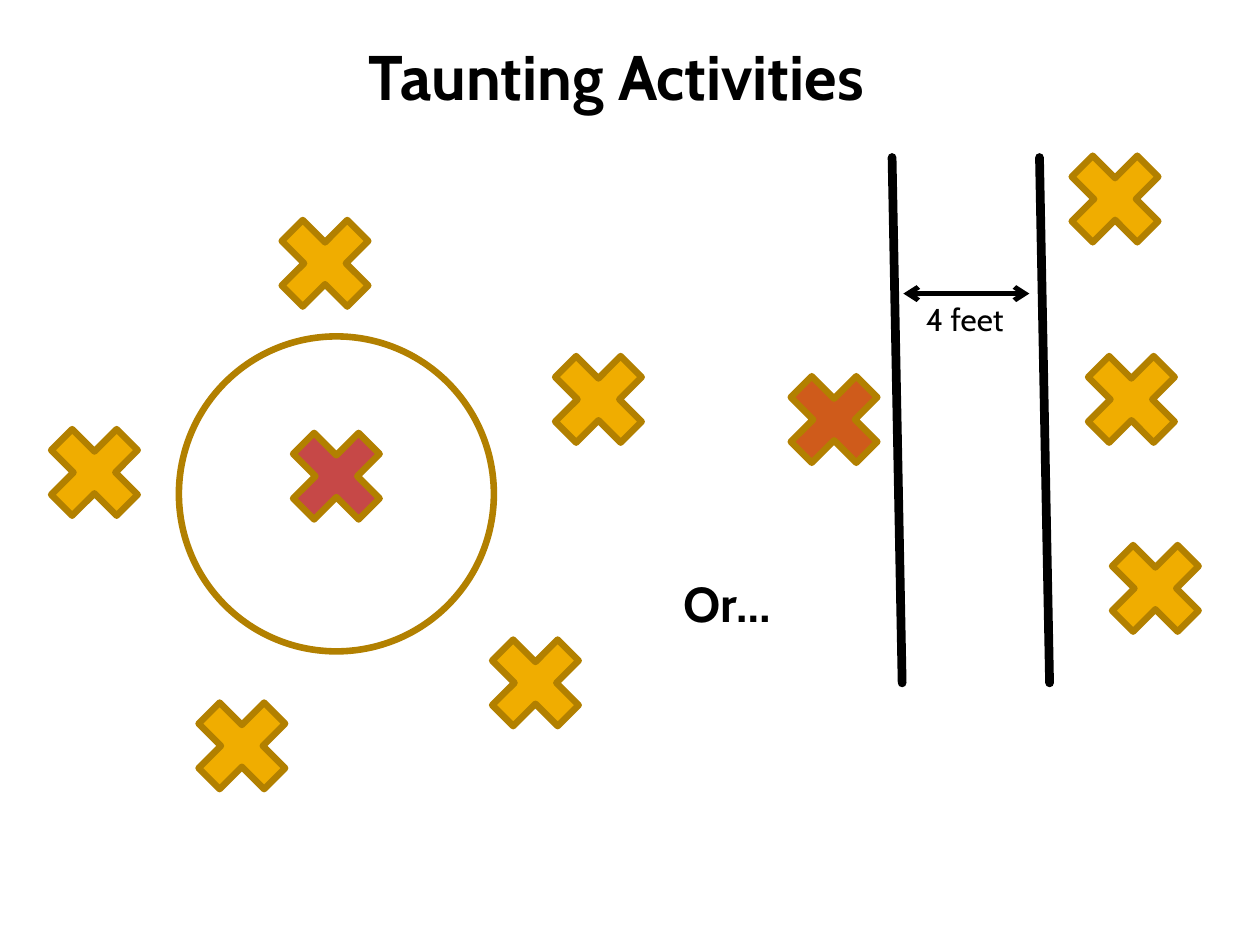
from lxml import etree
from pptx import Presentation
from pptx.dml.color import RGBColor
from pptx.enum.shapes import MSO_CONNECTOR, MSO_SHAPE
from pptx.enum.text import MSO_AUTO_SIZE
from pptx.oxml.ns import qn
from pptx.util import Inches, Pt

CIRCLE = MSO_SHAPE.OVAL
CROSS = MSO_SHAPE.MATH_MULTIPLY
STRAIGHT = MSO_CONNECTOR.STRAIGHT
GROW = MSO_AUTO_SIZE.SHAPE_TO_FIT_TEXT

BLACK = RGBColor(0x00, 0x00, 0x00)
GOLD = RGBColor(0xF0, 0xAD, 0x00)
DARK_GOLD = RGBColor(0xB2, 0x80, 0x00)
RED = RGBColor(0xC6, 0x48, 0x47)
ORANGE = RGBColor(0xCF, 0x5B, 0x1B)

CIRCLE_PLAYERS = [(2.08, 1.59), (0.25, 3.25), (1.42, 5.42), (4.25, 2.67), (3.75, 4.92)]
LINE_PLAYERS = [(8.35, 1.08), (8.48, 2.67), (8.67, 4.17)]


class Diagram:
    font = "Cabin"
    outline = 3.78
    player_size = 1

    def __init__(self, slide):
        self.shapes = slide.shapes

    def shape(self, kind, x, y, size, fill=None):
        sp = self.shapes.add_shape(kind, Inches(x), Inches(y), Inches(size), Inches(size))
        sp.shadow.inherit = False
        if fill is None:
            sp.fill.background()
        else:
            sp.fill.solid()
            sp.fill.fore_color.rgb = fill
        sp.line.color.rgb = DARK_GOLD
        sp.line.width = Pt(self.outline)
        etree.SubElement(sp.line._get_or_add_ln(), qn("a:round"))

    def player(self, x, y, fill=GOLD):
        self.shape(CROSS, x, y, self.player_size, fill)

    def line(self, x1, y1, x2, y2, width, arrows=False):
        cxn = self.shapes.add_connector(STRAIGHT, Inches(x1), Inches(y1), Inches(x2), Inches(y2))
        cxn.line.color.rgb = BLACK
        cxn.line.width = Pt(width)
        ln = cxn.line._get_or_add_ln()
        etree.SubElement(ln, qn("a:round"))
        if arrows:
            for end in ("a:headEnd", "a:tailEnd"):
                etree.SubElement(ln, qn(end), type="arrow")
        else:
            ln.set("cap", "rnd")
        etree.SubElement(cxn._element.spPr, qn("a:effectLst"))

    def text(self, x, y, w, h, words, size, bold=False):
        tf = self.shapes.add_textbox(Inches(x), Inches(y), Inches(w), Inches(h)).text_frame
        tf.word_wrap = True
        tf.auto_size = GROW
        p = tf.paragraphs[0]
        p.text = words
        p.font.name = self.font
        p.font.size = Pt(size)
        p.font.bold = bold
        p.font.color.rgb = BLACK


def main():
    prs = Presentation()
    prs.slide_width, prs.slide_height = Inches(10), Inches(7.5)
    d = Diagram(prs.slides.add_slide(prs.slide_layouts[6]))

    d.shape(CIRCLE, 1.42, 2.67, 2.5)
    for x, y in CIRCLE_PLAYERS:
        d.player(x, y)
    d.player(2.17, 3.28, RED)

    for x in (7.08, 8.25):
        d.line(x, 1.25, x + 0.08, 5.42, 5)
    d.player(6.12, 2.83, ORANGE)
    for x, y in LINE_PLAYERS:
        d.player(x, y)

    d.text(7.25, 2.33, 0.92, 0.42, "4 feet", 18)
    d.line(7.17, 2.33, 8.17, 2.33, 2.75, arrows=True)
    d.text(2.83, 0.25, 4.42, 0.71, "Taunting Activities", 36, bold=True)
    d.text(5.33, 4.5, 1, 0.57, "Or…", 28, bold=True)

    prs.save("out.pptx")


if __name__ == "__main__":
    main()
